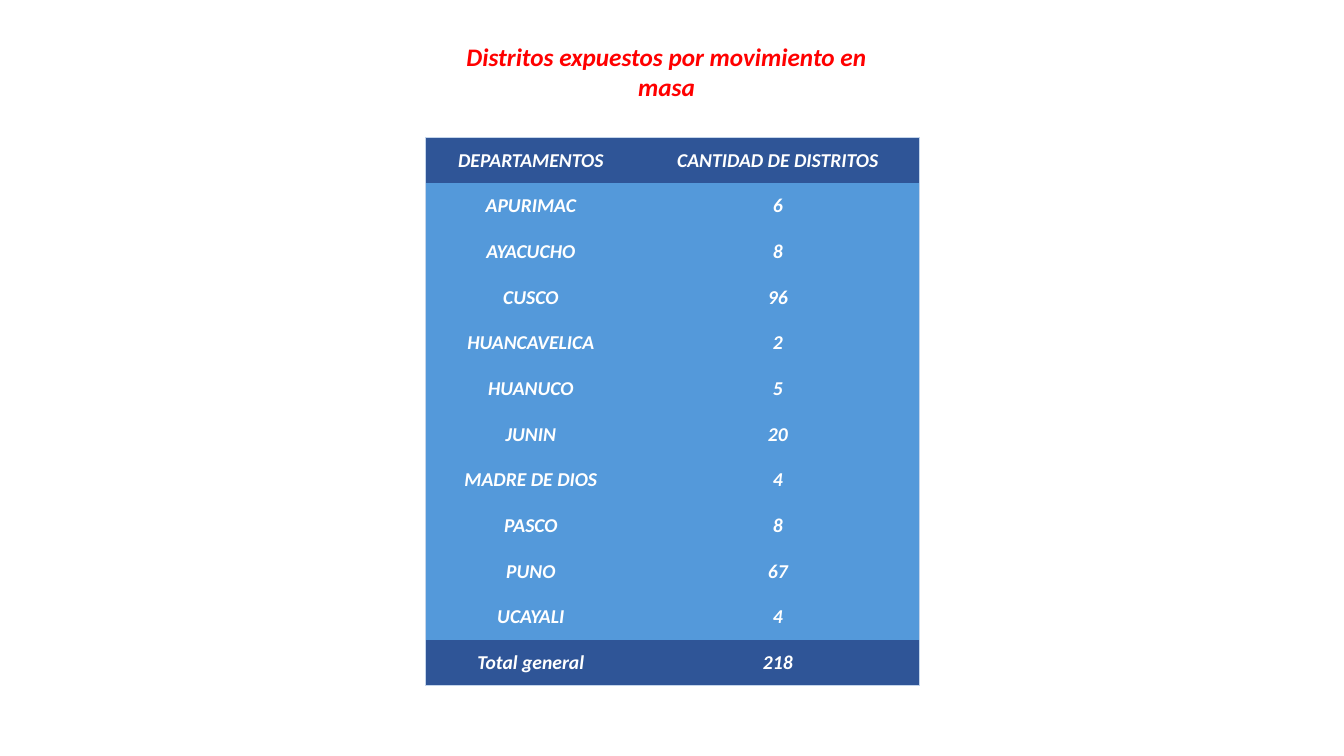
from dataclasses import dataclass

from lxml.etree import SubElement
from pptx import Presentation
from pptx.dml.color import RGBColor
from pptx.enum.text import MSO_ANCHOR, PP_ALIGN
from pptx.oxml.ns import qn
from pptx.util import Inches, Pt


@dataclass(frozen=True)
class Theme:
    font: str = "Calibri"
    title_size: int = 18
    cell_size: int = 14
    title: str = "FF0000"
    text: str = "FFFFFF"
    band: str = "2F5597"
    body: str = "5499DA"
    border: str = "C4D5EB"
    border_width: float = 0.5
    plain_table: str = "{2D5ABB26-0587-4C30-8999-92F81FD0307C}"


def write(tf, text, *, font, size, color, bold=True, italic=True,
          align=PP_ALIGN.CENTER, anchor=MSO_ANCHOR.MIDDLE):
    tf.vertical_anchor = anchor
    p = tf.paragraphs[0]
    p.alignment = align
    p.line_spacing = 1.0
    p.space_before = Pt(0)
    r = p.add_run()
    r.text = text
    r.font.name = font
    r.font.size = Pt(size)
    r.font.bold = bold
    r.font.italic = italic
    r.font.color.rgb = RGBColor.from_string(color)


class SlideBuilder:
    def __init__(self, prs, theme):
        self.theme = theme
        self.s = prs.slides.add_slide(prs.slide_layouts[5])

    def title(self, text, left, top, width, height):
        t = self.theme
        sp = self.s.shapes.title
        sp.left, sp.top = Inches(left), Inches(top)
        sp.width, sp.height = Inches(width), Inches(height)
        tf = sp.text_frame
        tf.word_wrap = False
        tf.margin_right = Inches(0.22)
        write(tf, text, font=t.font, size=t.title_size, color=t.title)

    def border(self, cell, side):
        """Draw one cell edge; side is L, R, T or B, added in that order."""
        t = self.theme
        ln = SubElement(cell._tc.get_or_add_tcPr(), qn(f"a:ln{side}"),
                        w=str(Pt(t.border_width)))
        fill = SubElement(ln, qn("a:solidFill"))
        SubElement(fill, qn("a:srgbClr"), val=t.border)

    def table(self, rows, left, top, col_widths, height):
        """Add a table whose first and last rows are dark bands."""
        t = self.theme
        last_row, last_col = len(rows) - 1, len(col_widths) - 1
        frame = self.s.shapes.add_table(
            len(rows), len(col_widths), Inches(left), Inches(top),
            Inches(sum(col_widths)), Inches(height))
        table = frame.table
        table.first_row = table.horz_banding = False
        table._tbl.tblPr.find(qn("a:tableStyleId")).text = t.plain_table
        for column, width in zip(table.columns, col_widths):
            column.width = Inches(width)
        for i, values in enumerate(rows):
            table.rows[i].height = Inches(height / len(rows))
            for j, value in enumerate(values):
                cell = table.cell(i, j)
                edges = {"L": j == 0, "R": j == last_col,
                         "T": i == 0, "B": i == last_row}
                for side, outer in edges.items():
                    if outer:
                        self.border(cell, side)
                cell.fill.solid()
                cell.fill.fore_color.rgb = RGBColor.from_string(
                    t.band if i in (0, last_row) else t.body)
                cell.margin_left = cell.margin_right = Inches(0.01)
                cell.margin_top, cell.margin_bottom = Inches(0.01), 0
                cell.vertical_anchor = MSO_ANCHOR.MIDDLE
                write(cell.text_frame, str(value), font=t.font,
                      size=t.cell_size, color=t.text, anchor=None)


DISTRICTS = [
    ("DEPARTAMENTOS", "CANTIDAD DE DISTRITOS"),
    ("APURIMAC", 6),
    ("AYACUCHO", 8),
    ("CUSCO", 96),
    ("HUANCAVELICA", 2),
    ("HUANUCO", 5),
    ("JUNIN", 20),
    ("MADRE DE DIOS", 4),
    ("PASCO", 8),
    ("PUNO", 67),
    ("UCAYALI", 4),
    ("Total general", 218),
]


def main():
    prs = Presentation()
    prs.slide_width, prs.slide_height = Inches(13.33), Inches(7.5)
    slide = SlideBuilder(prs, Theme())
    slide.title("Distritos expuestos por movimiento en masa", 4.22, 0.51, 4.9, 0.4)
    slide.table(DISTRICTS, 4.22, 1.36, (2.09, 2.81), 5.44)
    prs.save("out.pptx")


if __name__ == "__main__":
    main()
